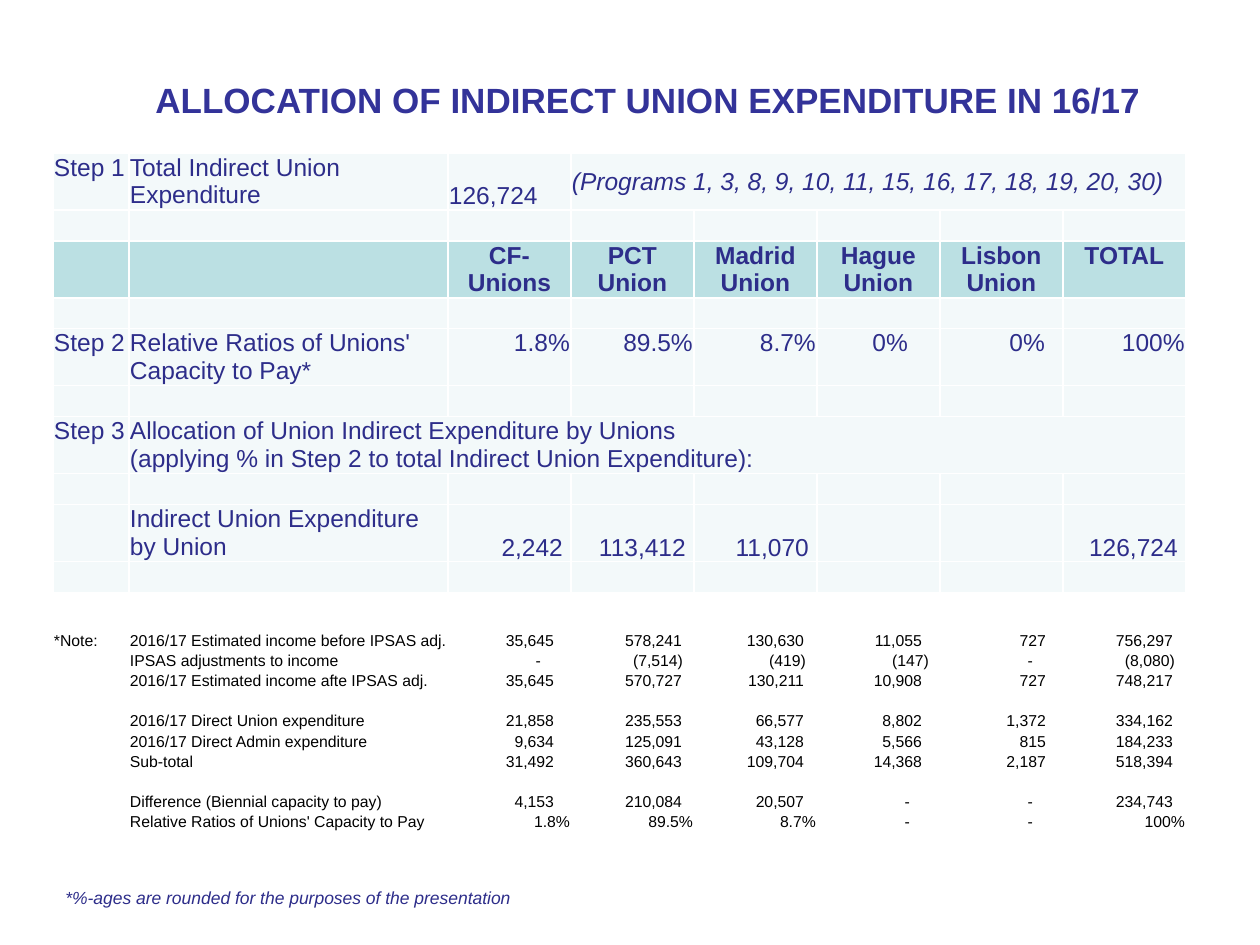
"""Build the slide on the allocation of indirect union expenditure."""
from lxml import etree
from pptx import Presentation
from pptx.dml.color import RGBColor
from pptx.enum.text import MSO_ANCHOR, PP_ALIGN
from pptx.oxml.ns import qn
from pptx.util import Emu, Pt

LEFT, CENTER, RIGHT = PP_ALIGN.LEFT, PP_ALIGN.CENTER, PP_ALIGN.RIGHT
TOP, MIDDLE, BOTTOM = MSO_ANCHOR.TOP, MSO_ANCHOR.MIDDLE, MSO_ANCHOR.BOTTOM
PIXEL = 914400 / 126
PLAIN_TABLE_STYLE = "{2D5ABB26-0587-4C30-8999-92F81FD0307C}"
THEME = {
    "font": "Arial",
    "title": {"color": "333399", "size": 20},
    "summary": {"color": "2D2D8A", "size": 14},
    "note": {"color": "000000", "size": 9},
    "footnote": {"color": "2D2D8A", "size": 10},
    "body_fill": "F3F9FA",
    "header_fill": "BBE0E3",
    "border": "FFFFFF",
}


def px(length):
    return Emu(round(length * PIXEL))


def write_text(frame, text, style, alignment=LEFT, bold=False, italic=False):
    frame.text = text
    values = {"name": THEME["font"], "size": Pt(style["size"]), "bold": bold, "italic": italic}
    for paragraph in frame.paragraphs:
        paragraph.alignment = alignment
        for run in paragraph.runs:
            for name, value in values.items():
                setattr(run.font, name, value)
            run.font.color.rgb = RGBColor.from_string(style["color"])
        if not paragraph.runs:
            end_format = etree.SubElement(paragraph._p, qn("a:endParaRPr"))
            end_format.set("sz", str(style["size"] * 100))


BLANK_ROW = [""] * 8
SUMMARY_ROWS = [
    ["Step 1", "Total Indirect Union Expenditure", "126,724",
     "(Programs 1, 3, 8, 9, 10, 11, 15, 16, 17, 18, 19, 20, 30)", "", "", "", ""],
    BLANK_ROW,
    ["", "", "CF-Unions", "PCT Union", "Madrid Union", "Hague Union", "Lisbon Union", "TOTAL"],
    BLANK_ROW,
    ["Step 2", "Relative Ratios of Unions' Capacity to Pay*",
     "1.8%", "89.5%", "8.7%", "0%", "0%", "100%"],
    BLANK_ROW,
    ["Step 3", "Allocation of Union Indirect Expenditure by Unions\n"
     "(applying % in Step 2 to total Indirect Union Expenditure):", "", "", "", "", "", ""],
    BLANK_ROW,
    ["", "Indirect Union Expenditure by Union", "2,242", "113,412", "11,070", "", "", "126,724"],
    BLANK_ROW,
]
NOTE_ROWS = [
    ["*Note:", "2016/17 Estimated income before IPSAS adj.",
     "35,645", "578,241", "130,630", "11,055", "727", "756,297"],
    ["", "IPSAS adjustments to income", "-", "(7,514)", "(419)", "(147)", "-", "(8,080)"],
    ["", "2016/17 Estimated income afte IPSAS adj.",
     "35,645", "570,727", "130,211", "10,908", "727", "748,217"],
    BLANK_ROW,
    ["", "2016/17 Direct Union expenditure",
     "21,858", "235,553", "66,577", "8,802", "1,372", "334,162"],
    ["", "2016/17 Direct Admin expenditure",
     "9,634", "125,091", "43,128", "5,566", "815", "184,233"],
    ["", "Sub-total", "31,492", "360,643", "109,704", "14,368", "2,187", "518,394"],
    BLANK_ROW,
    ["", "Difference (Biennial capacity to pay)",
     "4,153", "210,084", "20,507", "-", "-", "234,743"],
    ["", "Relative Ratios of Unions' Capacity to Pay",
     "1.8%", "89.5%", "8.7%", "-", "-", "100%"],
]
COLUMN_WIDTHS = [76, 319] + [123] * 6
TABLE_LEFT = 53
RATIO_ROW, AMOUNT_ROW, HEADER_ROW = 4, 8, 2
RATIO_INSETS = [0, 0, 1, 1, 1, 32, 18, 1]
NOTE_INSETS = [0, 0, 17, 12, 13, 18, 17, 13]
MARK_INSETS = {"-": 30, ")": 11, "%": 1}

presentation = Presentation()
presentation.slide_width, presentation.slide_height = px(1260), px(945)
slide = presentation.slides.add_slide(presentation.slide_layouts[6])

tables = {}
for key, rows, top, heights in (
    ("summary", SUMMARY_ROWS, 153, [57, 28] * 5),
    ("note", NOTE_ROWS, 631, [20] * 9 + [78]),
):
    frame = slide.shapes.add_table(
        len(rows), len(COLUMN_WIDTHS), px(TABLE_LEFT), px(top),
        px(sum(COLUMN_WIDTHS)), px(sum(heights)))
    table = tables[key] = frame.table
    table.first_row = table.horz_banding = False
    table._tbl.tblPr.find(qn("a:tableStyleId")).text = PLAIN_TABLE_STYLE
    for column, width in zip(table.columns, COLUMN_WIDTHS):
        column.width = px(width)
    for row, height in zip(table.rows, heights):
        row.height = px(height)

for row_index, row in enumerate(SUMMARY_ROWS):
    is_header = row_index == HEADER_ROW
    for column_index, text in enumerate(row):
        cell = tables["summary"].cell(row_index, column_index)
        is_number = column_index > 1 and row_index in (RATIO_ROW, AMOUNT_ROW)
        is_program_list = (row_index, column_index) == (0, 3)
        alignment = CENTER if is_header else RIGHT if is_number else LEFT
        write_text(cell.text_frame, text, THEME["summary"], alignment, is_header, is_program_list)
        inset = 8 if row_index == AMOUNT_ROW else RATIO_INSETS[column_index]
        at_bottom = column_index > 1 and row_index in (0, AMOUNT_ROW)
        layout = {
            "margin_left": px(1), "margin_top": px(1), "margin_bottom": 0,
            "margin_right": px(inset if is_number else 1),
            "vertical_anchor": MIDDLE if is_program_list else BOTTOM if at_bottom else TOP,
        }
        for name, value in layout.items():
            setattr(cell, name, value)
        for side in ("lnL", "lnR", "lnT", "lnB"):
            border = etree.SubElement(cell._tc.get_or_add_tcPr(), qn(f"a:{side}"), w="12700")
            border_fill = etree.SubElement(border, qn("a:solidFill"))
            etree.SubElement(border_fill, qn("a:srgbClr"), val=THEME["border"])
        cell.fill.solid()
        fill_name = "header_fill" if is_header else "body_fill"
        cell.fill.fore_color.rgb = RGBColor.from_string(THEME[fill_name])

for row_index, first_column in ((0, 3), (6, 1)):
    tables["summary"].cell(row_index, first_column).merge(tables["summary"].cell(row_index, 7))

for row_index, row in enumerate(NOTE_ROWS):
    for column_index, text in enumerate(row):
        cell = tables["note"].cell(row_index, column_index)
        is_number = column_index > 1
        write_text(cell.text_frame, text, THEME["note"], RIGHT if is_number else LEFT)
        inset = MARK_INSETS.get(text[-1:], NOTE_INSETS[column_index]) if is_number else 0
        layout = {"margin_left": px(1), "margin_top": px(1),
                  "margin_right": px(inset), "margin_bottom": 0}
        for name, value in layout.items():
            setattr(cell, name, value)
        cell.fill.background()

for key, text, box, alignment, bold, italic in (
    ("title", "ALLOCATION OF INDIRECT UNION EXPENDITURE IN 16/17",
     (135, 72, 1026, 55), CENTER, True, False),
    ("footnote", "*%-ages are rounded for the purposes of the presentation",
     (53, 881, 757, 34), LEFT, False, True),
):
    shape = slide.shapes.add_textbox(*map(px, box))
    shape.text_frame.word_wrap = True
    write_text(shape.text_frame, text, THEME[key], alignment, bold, italic)

presentation.save("out.pptx")
